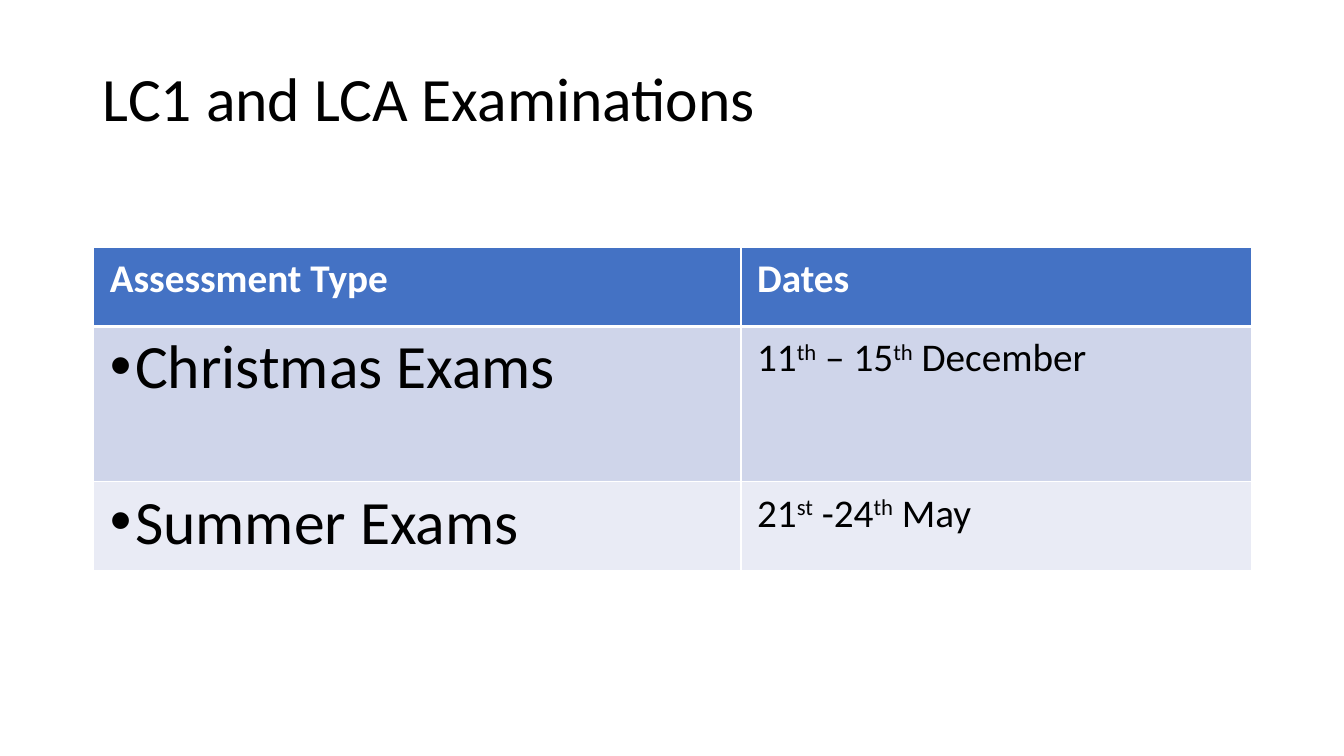
from lxml import etree
from pptx import Presentation
from pptx import util as u
from pptx.dml.color import RGBColor
from pptx.enum import text
from pptx.oxml import ns

COLORS = {"ink": "000000", "white": "FFFFFF", "header": "4472C4",
          "band_dark": "CFD5EA", "band_light": "E9EBF5"}
FONT = "Calibri"
TITLE_BOX = (0.92, 0.28, 11.49, 1.11)
TABLE_BOX = (0.93, 2.45, 11.48, 3.21)
COLUMN_WIDTHS = (6.42, 5.06)
ROW_HEIGHTS = (0.79, 1.54, 0.88)
HEADINGS = ("Assessment Type", "Dates")
EXAMS = (
    ("Christmas Exams", ("11", "th", " – 15", "th", " December")),
    ("Summer Exams", ("21", "st", " -24", "th", " May")),
)


def add_child(parent, tag, **attributes):
    """Append a DrawingML element and return it."""
    return etree.SubElement(parent, ns.qn(tag), attributes)


def write_text(frame, parts, size=28, color="ink", bold=False, bullet=False, spacing=None):
    """Write parts into the first paragraph, raising every second part."""
    paragraph = frame.paragraphs[0]
    paragraph.alignment = text.PP_ALIGN.LEFT
    paragraph.space_before = u.Pt(0)
    if spacing:
        paragraph.line_spacing = spacing
    if bullet:
        properties = paragraph._p.get_or_add_pPr()
        indent = u.Inches(0.25)
        properties.set("marL", str(indent))
        properties.set("indent", str(-indent))
        add_child(properties, "a:buFont", typeface="Arial")
        add_child(properties, "a:buChar", char="•")
    for index, part in enumerate(parts):
        run = paragraph.add_run()
        run.text = part
        run.font.name = FONT
        run.font.size = u.Pt(size)
        run.font.bold = bold
        run.font.color.rgb = RGBColor.from_string(COLORS[color])
        if index % 2:
            run._r.get_or_add_rPr().set("baseline", "30000")


def format_cell(cell, fill, top=1, bottom=1):
    """Set the margins, white borders and fill of a cell."""
    cell.margin_left = cell.margin_right = u.Inches(0.16)
    cell.margin_top = cell.margin_bottom = u.Inches(0.08)
    properties = cell._tc.get_or_add_tcPr()
    for side, width in (("L", 1), ("R", 1), ("T", top), ("B", bottom)):
        line = add_child(properties, f"a:ln{side}", w=str(u.Pt(width)))
        solid = add_child(line, "a:solidFill")
        add_child(solid, "a:srgbClr", val=COLORS["white"])
    cell.fill.solid()
    cell.fill.fore_color.rgb = RGBColor.from_string(COLORS[fill])


def place_title(slide, box):
    """Move the title placeholder into the box and fill it."""
    title = slide.shapes.title
    title.left, title.top, title.width, title.height = map(u.Inches, box)
    frame = title.text_frame
    frame.auto_size = text.MSO_AUTO_SIZE.NONE
    frame.word_wrap = True
    frame.vertical_anchor = text.MSO_ANCHOR.BOTTOM
    write_text(frame, ["LC1 and LCA Examinations"], size=44, spacing=0.9)


def place_exam_table(slide, box):
    """Build the table of exams and their dates in the box."""
    shape = slide.shapes.add_table(len(ROW_HEIGHTS), len(COLUMN_WIDTHS), *map(u.Inches, box))
    table = shape.table
    for column, width in zip(table.columns, COLUMN_WIDTHS):
        column.width = u.Inches(box[2] * width / sum(COLUMN_WIDTHS))
    for row, height in zip(table.rows, ROW_HEIGHTS):
        row.height = u.Inches(box[3] * height / sum(ROW_HEIGHTS))
    for column, heading in enumerate(HEADINGS):
        cell = table.cell(0, column)
        format_cell(cell, "header", bottom=3)
        write_text(cell.text_frame, [heading], color="white", bold=True)
    for row, (exam, dates) in enumerate(EXAMS, start=1):
        exam_cell, date_cell = table.cell(row, 0), table.cell(row, 1)
        for cell in (exam_cell, date_cell):
            format_cell(cell, "band_dark" if row % 2 else "band_light", top=3 if row == 1 else 1)
        write_text(exam_cell.text_frame, [exam], size=44, bullet=True, spacing=0.9)
        write_text(date_cell.text_frame, dates)


def main():
    """Build and save the presentation."""
    presentation = Presentation()
    presentation.slide_width = u.Inches(13.33)
    presentation.slide_height = u.Inches(7.5)
    slide = presentation.slides.add_slide(presentation.slide_layouts[5])
    place_title(slide, TITLE_BOX)
    place_exam_table(slide, TABLE_BOX)
    presentation.save("out.pptx")


if __name__ == "__main__":
    main()
